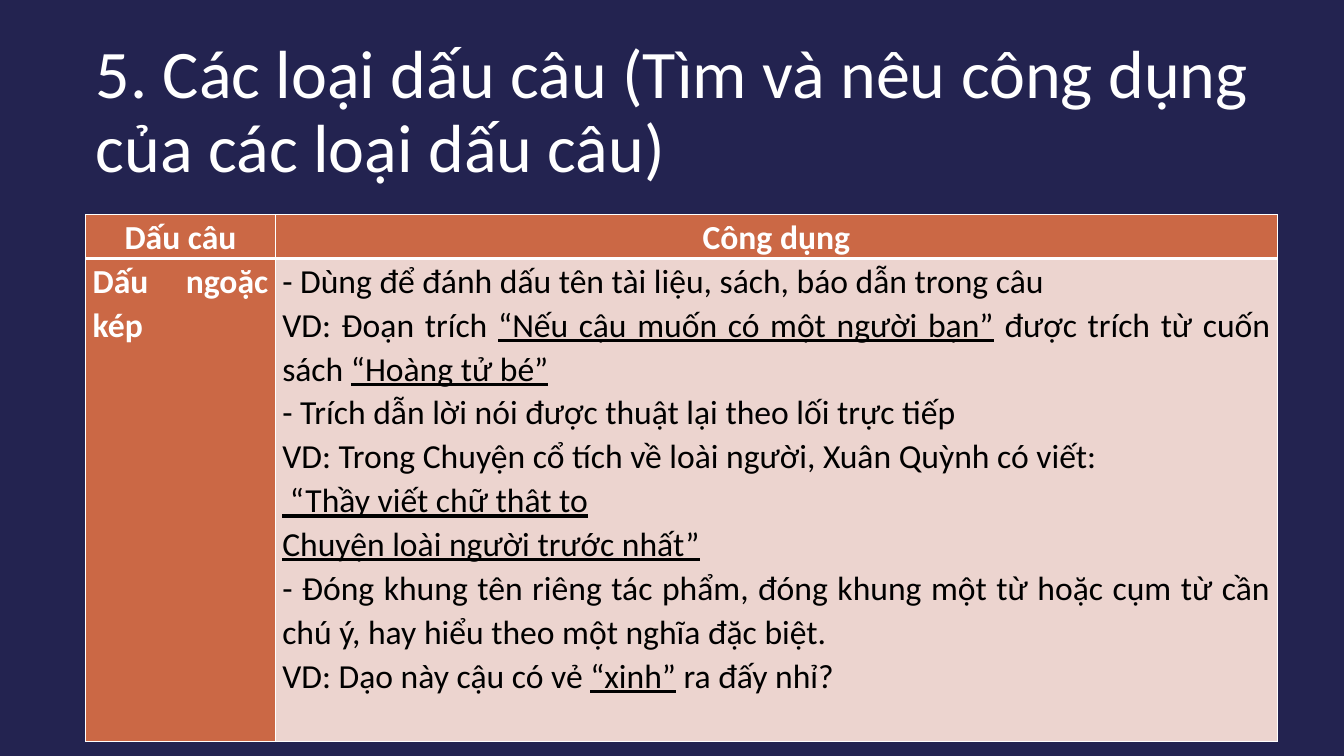
from dataclasses import dataclass

from lxml import etree
from pptx import Presentation
from pptx.dml.color import RGBColor
from pptx.enum import text
from pptx.oxml import ns
from pptx.table import _Cell
from pptx.text.text import _Paragraph
from pptx.util import Inches, Pt


@dataclass(frozen=True)
class Theme:
    font: str = "Calibri"
    title_size: float = 48.6
    table_size: float = 24
    background: str = "232350"
    accent: str = "CB6845"
    pale: str = "ECD4CF"
    light: str = "FFFFFF"
    dark: str = "000000"


@dataclass(frozen=True)
class Span:
    wording: str
    underline: bool = False


@dataclass(frozen=True)
class CellStyle:
    fill: str
    color: str
    bold: bool
    align: text.PP_ALIGN
    top_line: float
    bottom_line: float


@dataclass(frozen=True)
class Entry:
    row: int
    column: int
    style: CellStyle
    paragraphs: list[list[Span]]


THEME = Theme()
HEADER = CellStyle(THEME.accent, THEME.light, True, text.PP_ALIGN.CENTER, 1, 3)
MARK = CellStyle(THEME.accent, THEME.light, True, text.PP_ALIGN.JUSTIFY, 3, 1)
USAGE = CellStyle(THEME.pale, THEME.dark, False, text.PP_ALIGN.JUSTIFY, 3, 1)

HEADING = "5. Các loại dấu câu (Tìm và nêu công dụng của các loại dấu câu)"
COLUMN_WIDTHS = (1.88, 9.94)
ROW_HEIGHTS = (0.43, 4.79)
ENTRIES = [
    Entry(0, 0, HEADER, [[Span("Dấu câu")]]),
    Entry(0, 1, HEADER, [[Span("Công dụng")]]),
    Entry(1, 0, MARK, [[Span("Dấu ngoặc kép")]]),
    Entry(1, 1, USAGE, [
        [Span("- Dùng để đánh dấu tên tài liệu, sách, báo dẫn trong câu")],
        [Span("VD: Đoạn trích "), Span("“Nếu cậu muốn có một người bạn”", True),
         Span(" được trích từ cuốn sách "), Span("“Hoàng tử bé”", True)],
        [Span("- Trích dẫn lời nói được thuật lại theo lối trực tiếp")],
        [Span("VD: Trong Chuyện cổ tích về loài người, Xuân Quỳnh có viết:")],
        [Span(" “Thầy viết chữ thật to", True)],
        [Span("Chuyện loài người trước nhất”", True)],
        [Span("- Đóng khung tên riêng tác phẩm, đóng khung một từ hoặc cụm từ "
              "cần chú ý, hay hiểu theo một nghĩa đặc biệt.")],
        [Span("VD: Dạo này cậu có vẻ "), Span("“xinh”", True),
         Span(" ra đấy nhỉ?")],
    ]),
]


def add_span(paragraph: _Paragraph, span: Span, size: float, color: str,
             bold: bool = False) -> None:
    run = paragraph.add_run()
    run.text = span.wording
    run.font.name = THEME.font
    run.font.size = Pt(size)
    run.font.bold = bold
    run.font.underline = span.underline
    run.font.color.rgb = RGBColor.from_string(color)


def add_borders(cell: _Cell, style: CellStyle) -> None:
    properties = cell._tc.get_or_add_tcPr()
    widths = {"L": 1, "R": 1, "T": style.top_line, "B": style.bottom_line}
    for side, width in widths.items():
        line = etree.SubElement(properties, ns.qn(f"a:ln{side}"), w=str(Pt(width)))
        solid = etree.SubElement(line, ns.qn("a:solidFill"))
        etree.SubElement(solid, ns.qn("a:srgbClr"), val=THEME.light)


def fill_cell(cell: _Cell, entry: Entry) -> None:
    style = entry.style
    cell.margin_left = cell.margin_right = Inches(0.07)
    cell.margin_top = cell.margin_bottom = 0
    add_borders(cell, style)
    cell.fill.solid()
    cell.fill.fore_color.rgb = RGBColor.from_string(style.fill)
    for index, spans in enumerate(entry.paragraphs):
        frame = cell.text_frame
        paragraph = frame.add_paragraph() if index else frame.paragraphs[0]
        paragraph.alignment = style.align
        paragraph.line_spacing = 1.07
        for span in spans:
            add_span(paragraph, span, THEME.table_size, style.color, style.bold)


def add_heading(slide) -> None:
    heading = slide.shapes.title
    heading.left, heading.top = Inches(0.85), Inches(0.4)
    heading.width, heading.height = Inches(11.63), Inches(1.45)
    heading.text_frame.word_wrap = True
    heading.text_frame.auto_size = text.MSO_AUTO_SIZE.NONE
    heading.text_frame.vertical_anchor = text.MSO_ANCHOR.MIDDLE
    paragraph = heading.text_frame.paragraphs[0]
    paragraph.alignment = text.PP_ALIGN.LEFT
    paragraph.line_spacing = 0.9
    add_span(paragraph, Span(HEADING), THEME.title_size, THEME.light)


def add_punctuation_table(slide) -> None:
    table = slide.shapes.add_table(
        len(ROW_HEIGHTS), len(COLUMN_WIDTHS), Inches(0.85), Inches(2.13),
        Inches(sum(COLUMN_WIDTHS)), Inches(sum(ROW_HEIGHTS))).table
    table.horz_banding = False
    for column, width in zip(table.columns, COLUMN_WIDTHS):
        column.width = Inches(width)
    for row, height in zip(table.rows, ROW_HEIGHTS):
        row.height = Inches(height)
    for entry in ENTRIES:
        fill_cell(table.cell(entry.row, entry.column), entry)


def main() -> None:
    deck = Presentation()
    deck.slide_width, deck.slide_height = Inches(13.33), Inches(7.5)
    slide = deck.slides.add_slide(deck.slide_layouts.get_by_name("Title Only"))
    slide.background.fill.solid()
    slide.background.fill.fore_color.rgb = RGBColor.from_string(THEME.background)
    add_heading(slide)
    add_punctuation_table(slide)
    deck.save("out.pptx")


if __name__ == "__main__":
    main()
